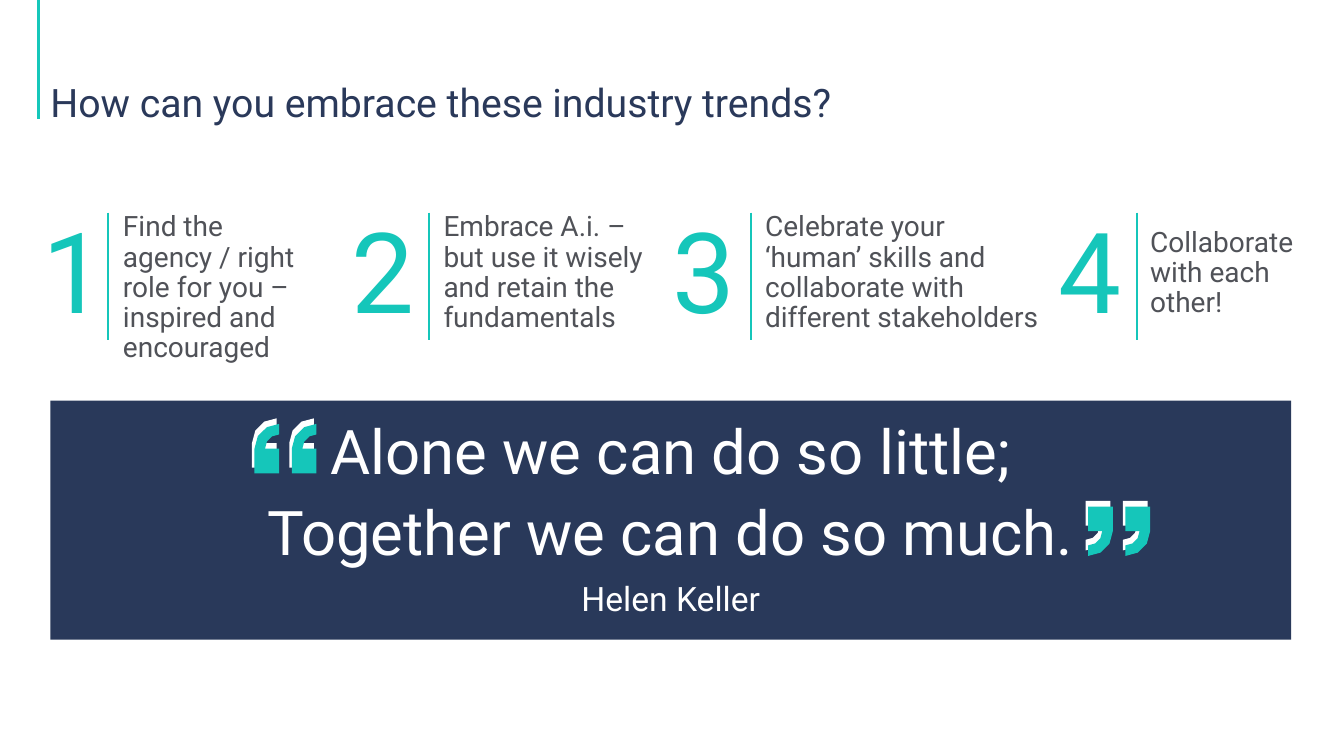
"""Build a slide with four numbered steps above a quotation banner."""
import math
from dataclasses import dataclass

import lxml.etree
import pptx
import pptx.dml.color
import pptx.enum.shapes
import pptx.enum.text
import pptx.oxml.ns
import pptx.util

ALIGN = pptx.enum.text.PP_ALIGN
ANCHOR = pptx.enum.text.MSO_ANCHOR
AUTO = pptx.enum.text.MSO_AUTO_SIZE
COLS, ROWS = 133.33, 75


@dataclass(frozen=True)
class Theme:
    """Hold the colours, font and type sizes."""
    font: str = "Roboto"
    navy: str = "2A395A"
    banner: str = "29395A"
    teal: str = "15C6BA"
    accent: str = "15C7BA"
    grey: str = "505258"
    white: str = "FFFFFF"
    title: int = 28
    body: int = 20
    number: int = 80
    quote: int = 44
    author: int = 24


def rgb(color):
    """Turn a hex string into a colour."""
    return pptx.dml.color.RGBColor.from_string(color)


def apply(obj, formats):
    """Set each attribute named in a dict of format values."""
    for name, value in formats.items():
        setattr(obj, name, value)


class Deck:
    """Draw elements on the current slide, placed by grid columns and rows."""

    def __init__(self, prs, theme):
        """Add a slide with a title placeholder."""
        self.theme = theme
        self.cell_w = prs.slide_width / COLS
        self.cell_h = prs.slide_height / ROWS
        self.slide = prs.slides.add_slide(prs.slide_layouts[5])

    def at(self, col, row):
        """Convert columns and rows to lengths."""
        return round(col * self.cell_w), round(row * self.cell_h)

    def box(self, col, row, cols, rows):
        """Convert a grid rectangle to left, top, width and height."""
        return *self.at(col, row), *self.at(cols, rows)

    def text(self, sp, lines, color, align=ALIGN.LEFT, anchor=ANCHOR.TOP,
             inset=0, auto=AUTO.NONE):
        """Fill a shape with paragraphs given as text and size pairs."""
        tf = sp.text_frame
        margins = dict.fromkeys(("margin_left", "margin_top", "margin_right",
                                 "margin_bottom"), pptx.util.Inches(inset))
        apply(tf, {"word_wrap": True, "auto_size": auto,
                   "vertical_anchor": anchor, **margins})
        for i, (words, size) in enumerate(lines):
            p = tf.add_paragraph() if i else tf.paragraphs[0]
            apply(p, {"alignment": align, "line_spacing": 0.9,
                      "space_before": pptx.util.Pt(10 if i else 0)})
            r = p.add_run()
            r.text = words
            apply(r.font, {"name": self.theme.font,
                           "size": pptx.util.Pt(size)})
            r.font.color.rgb = rgb(color)

    def title(self, words, *box):
        """Place and format the slide title."""
        sp = self.slide.shapes.title
        apply(sp, dict(zip(("left", "top", "width", "height"), self.box(*box))))
        self.text(sp, [(words, self.theme.title)], self.theme.navy,
                  anchor=ANCHOR.BOTTOM)

    def fill(self, sp, color=None):
        """Give a shape a flat fill, or none, without line or shadow."""
        sp.shadow.inherit = False
        sp.line.fill.background()
        if color:
            sp.fill.solid()
            sp.fill.fore_color.rgb = rgb(color)
        else:
            sp.fill.background()

    def outline(self, shapes, points, color=None):
        """Add a closed outline through grid points."""
        start, *rest = [self.at(*point) for point in points]
        fb = shapes.build_freeform(*start)
        fb.add_line_segments(rest)
        sp = fb.convert_to_shape()
        self.fill(sp, color)
        return sp

    def label(self, words, size, color, box, anchor=ANCHOR.TOP):
        """Add text in an unfilled outline."""
        x, y, w, h = box
        corners = [(x, y), (x + w, y), (x + w, y + h), (x, y + h)]
        sp = self.outline(self.slide.shapes, corners)
        self.text(sp, [(words, size)], color, anchor=anchor, inset=0.14,
                  auto=AUTO.SHAPE_TO_FIT_TEXT)

    def rule(self, col, top, bottom, width, color):
        """Add a vertical line."""
        cn = self.slide.shapes.add_connector(
            pptx.enum.shapes.MSO_CONNECTOR.STRAIGHT,
            *self.at(col, top), *self.at(col, bottom))
        cn.line.color.rgb = rgb(color)
        cn.line.width = pptx.util.Pt(width)
        lxml.etree.SubElement(cn._element.spPr,
                              pptx.oxml.ns.qn("a:effectLst"))

    def banner(self, lines, *box):
        """Add a filled rectangle with centred text."""
        sp = self.slide.shapes.add_shape(
            pptx.enum.shapes.MSO_SHAPE.RECTANGLE, *self.box(*box))
        self.fill(sp, self.theme.banner)
        self.text(sp, lines, self.theme.white, ALIGN.CENTER, ANCHOR.MIDDLE)

    def comma(self, shapes, col, row, color, opening):
        """Add one quotation mark, turned half round when it opens."""
        wide, tall, square, inner = 2.45, 4.9, 2.45, 1.4
        angles = [math.radians(a) for a in range(0, 91, 30)]
        points = [(0, 0), (0, square)]
        for radius, sweep in ((inner, angles), (wide, angles[::-1])):
            points += [(radius * math.cos(a), square + radius * math.sin(a))
                       for a in sweep]
        points.append((wide, 0))
        if opening:
            points = [(wide - x, tall - y) for x, y in points]
        self.outline(shapes, [(col + x, row + y) for x, y in points], color)

    def quotes(self, col, row, opening):
        """Group a pair of white marks with a teal pair over it."""
        shapes = self.slide.shapes.add_group_shape().shapes
        for color, dx, dy in ((self.theme.white, 0, 0),
                              (self.theme.teal, 0.25, 0.55)):
            for i in range(2):
                self.comma(shapes, col + dx + 3.7 * i, row + dy, color, opening)

    def step(self, number, words, number_col, rule_col, text_box):
        """Add a big number, its rule and its text."""
        t = self.theme
        self.label(words, t.body, t.grey, text_box)
        self.label(str(number), t.number, t.teal, (number_col, 20, 9.1, 15),
                   ANCHOR.MIDDLE)
        self.rule(rule_col, 21.1, 33.7, 1.5, t.teal)


STEPS = [
    ("Find the agency / right role for you – inspired and encouraged",
     2.8, 10.7, (10.8, 19.7, 23.8, 15)),
    ("Embrace A.i. – but use it wisely and retain the fundamentals",
     33.5, 42.55, (42.6, 19.7, 23.8, 15)),
    ("Celebrate your ‘human’ skills and collaborate with different "
     "stakeholders", 65.3, 74.5, (74.5, 19.7, 30.2, 15)),
    ("Collaborate with each other!",
     103.6, 112.8, (112.7, 21.2, 17.9, 11.9)),
]


def main():
    """Compose and save the slide."""
    prs = pptx.Presentation()
    prs.slide_width = pptx.util.Inches(13.33)
    prs.slide_height = pptx.util.Inches(7.5)
    theme = Theme()
    deck = Deck(prs, theme)
    deck.rule(3.85, 0, 11.8, 2.25, theme.accent)
    deck.title("How can you embrace these industry trends?",
               5, 4, 121.1, 8.5)
    deck.banner([("Alone we can do so little;", theme.quote),
                 ("Together we can do so much.", theme.quote),
                 ("Helen Keller", theme.author)], 5, 39.75, 123.1, 23.7)
    deck.quotes(107.7, 49.7, opening=False)
    deck.quotes(25, 41.5, opening=True)
    for number, step in enumerate(STEPS, 1):
        deck.step(number, *step)
    prs.save("out.pptx")


if __name__ == "__main__":
    main()
